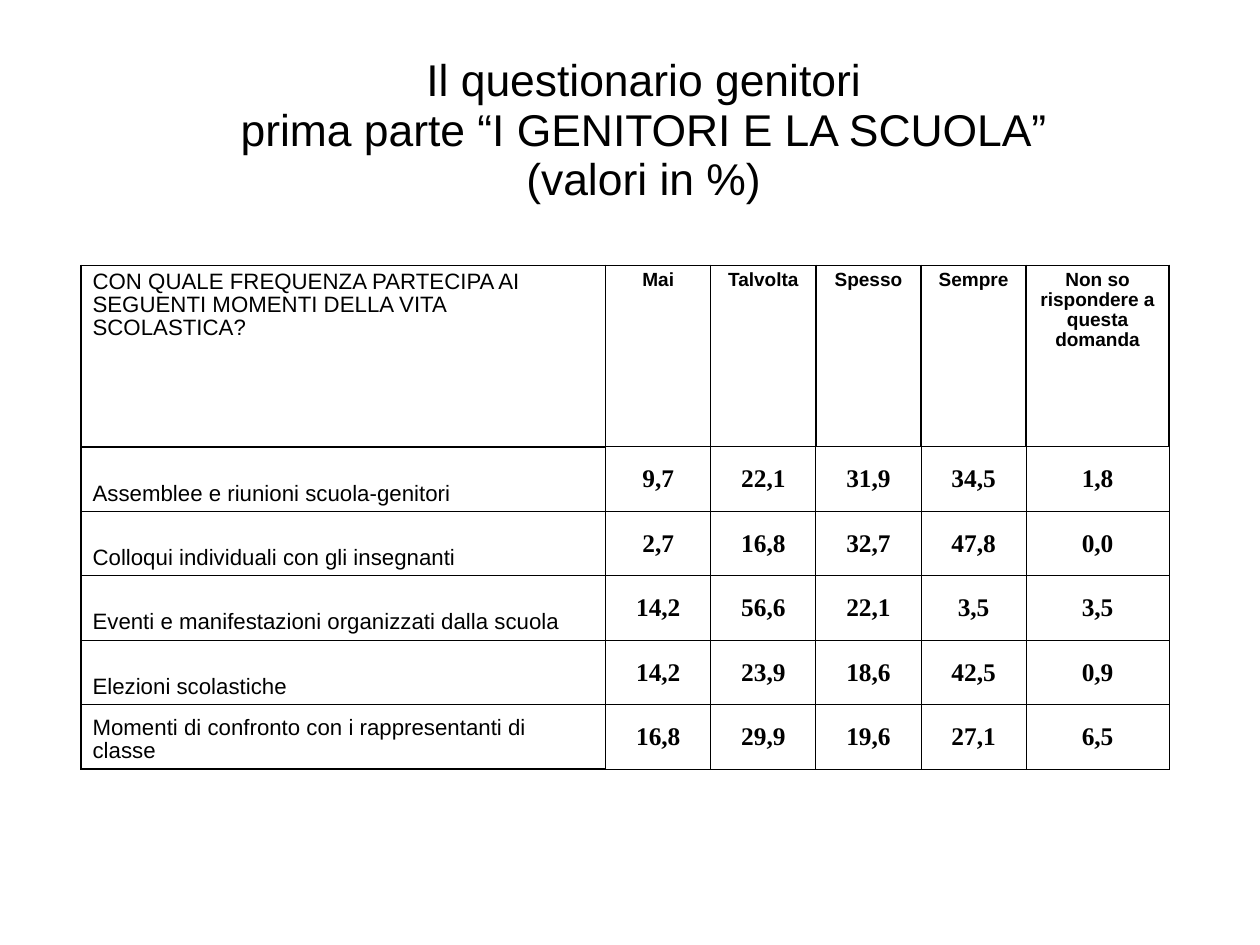
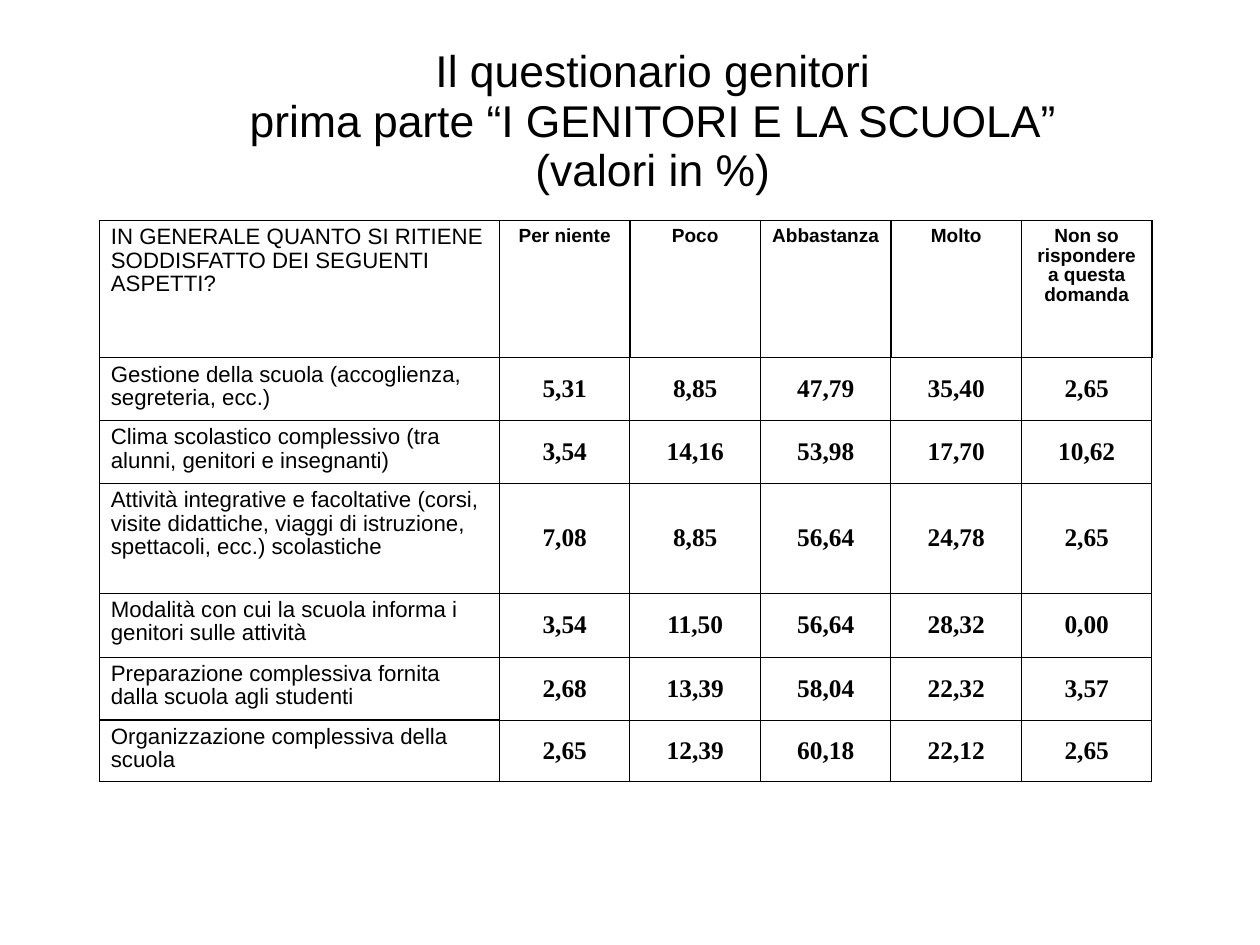
from lxml.etree import SubElement
from pptx import Presentation
from pptx.dml.color import RGBColor
from pptx.enum.text import MSO_ANCHOR, MSO_AUTO_SIZE, PP_ALIGN
from pptx.oxml.ns import qn
from pptx.util import Inches, Pt

BLACK = RGBColor(0, 0, 0)
WHITE = RGBColor(255, 255, 255)
SANS, SERIF = "Arial", "Times New Roman"
THIN, THICK = Pt(0.75), Pt(0.96)
TIGHT = 0.93

TITLE = "Il questionario genitori\nprima parte “I GENITORI E LA SCUOLA”\n(valori in %)"
UNSURE = "Non so rispondere a questa domanda"

EVENTS = [
    ["CON QUALE FREQUENZA PARTECIPA AI SEGUENTI MOMENTI DELLA VITA SCOLASTICA?",
     "Mai", "Talvolta", "Spesso", "Sempre", UNSURE],
    ["Assemblee e riunioni scuola-genitori", "9,7", "22,1", "31,9", "34,5", "1,8"],
    ["Colloqui individuali con gli insegnanti", "2,7", "16,8", "32,7", "47,8", "0,0"],
    ["Eventi e manifestazioni organizzati dalla scuola",
     "14,2", "56,6", "22,1", "3,5", "3,5"],
    ["Elezioni scolastiche", "14,2", "23,9", "18,6", "42,5", "0,9"],
    ["Momenti di confronto con i rappresentanti di classe",
     "16,8", "29,9", "19,6", "27,1", "6,5"],
]
ASPECTS = [
    ["IN GENERALE QUANTO SI RITIENE SODDISFATTO DEI SEGUENTI ASPETTI?",
     "Per niente", "Poco", "Abbastanza", "Molto", UNSURE],
    ["Gestione della scuola (accoglienza, segreteria, ecc.)",
     "5,31", "8,85", "47,79", "35,40", "2,65"],
    ["Clima scolastico complessivo (tra alunni, genitori e insegnanti)",
     "3,54", "14,16", "53,98", "17,70", "10,62"],
    ["Attività integrative e facoltative (corsi, visite didattiche, "
     "viaggi di istruzione, spettacoli, ecc.) scolastiche",
     "7,08", "8,85", "56,64", "24,78", "2,65"],
    ["Modalità con cui la scuola informa i genitori sulle attività",
     "3,54", "11,50", "56,64", "28,32", "0,00"],
    ["Preparazione complessiva fornita dalla scuola agli studenti",
     "2,68", "13,39", "58,04", "22,32", "3,57"],
    ["Organizzazione complessiva della scuola",
     "2,65", "12,39", "60,18", "22,12", "2,65"],
]


def write(frame, text, size, face=SANS, bold=False, align=PP_ALIGN.CENTER, gap=TIGHT):
    para = frame.paragraphs[0]
    para.text = text
    para.alignment = align
    para.line_spacing = gap
    font = para.font
    font.name, font.size, font.bold = face, Pt(size), bold
    font.color.rgb = BLACK


def add_slide(deck, left, top):
    """Add a slide with the shared title placed at left, top."""
    slide = deck.slides.add_slide(deck.slide_layouts[5])
    title = slide.shapes.title
    title.left, title.top = Inches(left), Inches(top)
    title.width, title.height = Inches(9.92), Inches(1.38)
    frame = title.text_frame
    frame.auto_size = MSO_AUTO_SIZE.NONE
    frame.vertical_anchor = MSO_ANCHOR.MIDDLE
    frame.margin_left = frame.margin_right = 0
    frame.margin_top = frame.margin_bottom = 0
    write(frame, TITLE, 28)
    return slide


def set_edges(cell, left, right, top, bottom):
    """Draw the four cell borders with the given widths."""
    props = cell._tc.get_or_add_tcPr()
    for side, width in zip("LRTB", (left, right, top, bottom)):
        line = SubElement(props, qn(f"a:ln{side}"), w=str(int(width)))
        fill = SubElement(line, qn("a:solidFill"))
        SubElement(fill, qn("a:srgbClr"), val=str(BLACK))


def fill_cell(cell, text, row, col, anchor):
    """Style a cell as question, answer, row label or value."""
    if row and col:
        set_edges(cell, THIN, THIN, THIN, THIN)
        cell.fill.background()
        cell.vertical_anchor = MSO_ANCHOR.MIDDLE
        write(cell.text_frame, text, 16, SERIF, bold=True, gap=1.0)
        return
    right = THIN if row else THICK
    bottom = THIN if col else THICK
    set_edges(cell, THICK, right, THICK, bottom)
    cell.fill.solid()
    cell.fill.fore_color.rgb = WHITE
    cell.vertical_anchor = anchor if row else MSO_ANCHOR.TOP
    if col:
        write(cell.text_frame, text, 12, bold=True)
    else:
        write(cell.text_frame, text, 14, align=PP_ALIGN.LEFT)


def add_grid(slide, data, left, top, widths, heights, anchor=MSO_ANCHOR.TOP):
    frame = slide.shapes.add_table(
        len(data), len(widths), Inches(left), Inches(top),
        Inches(sum(widths)), Inches(sum(heights)))
    table = frame.table
    table.first_row = table.horz_banding = False
    for column, width in zip(table.columns, widths):
        column.width = Inches(width)
    for line, height in zip(table.rows, heights):
        line.height = Inches(height)
    for row, texts in enumerate(data):
        for col, text in enumerate(texts):
            fill_cell(table.cell(row, col), text, row, col, anchor)


def main():
    deck = Presentation()
    deck.slide_width, deck.slide_height = Pt(793.75), Pt(595.25)
    # The template's 4:3 screen tag does not fit this custom size.
    deck.element.sldSz.attrib.pop("type", None)

    slide = add_slide(deck, 0.67, 0.46)
    add_grid(slide, EVENTS, 0.71, 2.32, [4.59] + [0.92] * 4 + [1.25],
             [1.59] + [2.82 / 5] * 5, MSO_ANCHOR.BOTTOM)

    slide = add_slide(deck, 0.75, 0.38)
    add_grid(slide, ASPECTS, 0.87, 1.93, [3.5] + [5.71 / 5] * 5,
             [1.2, 0.55, 0.55, 0.96, 0.56, 0.55, 0.54])

    deck.save("out.pptx")


if __name__ == "__main__":
    main()
